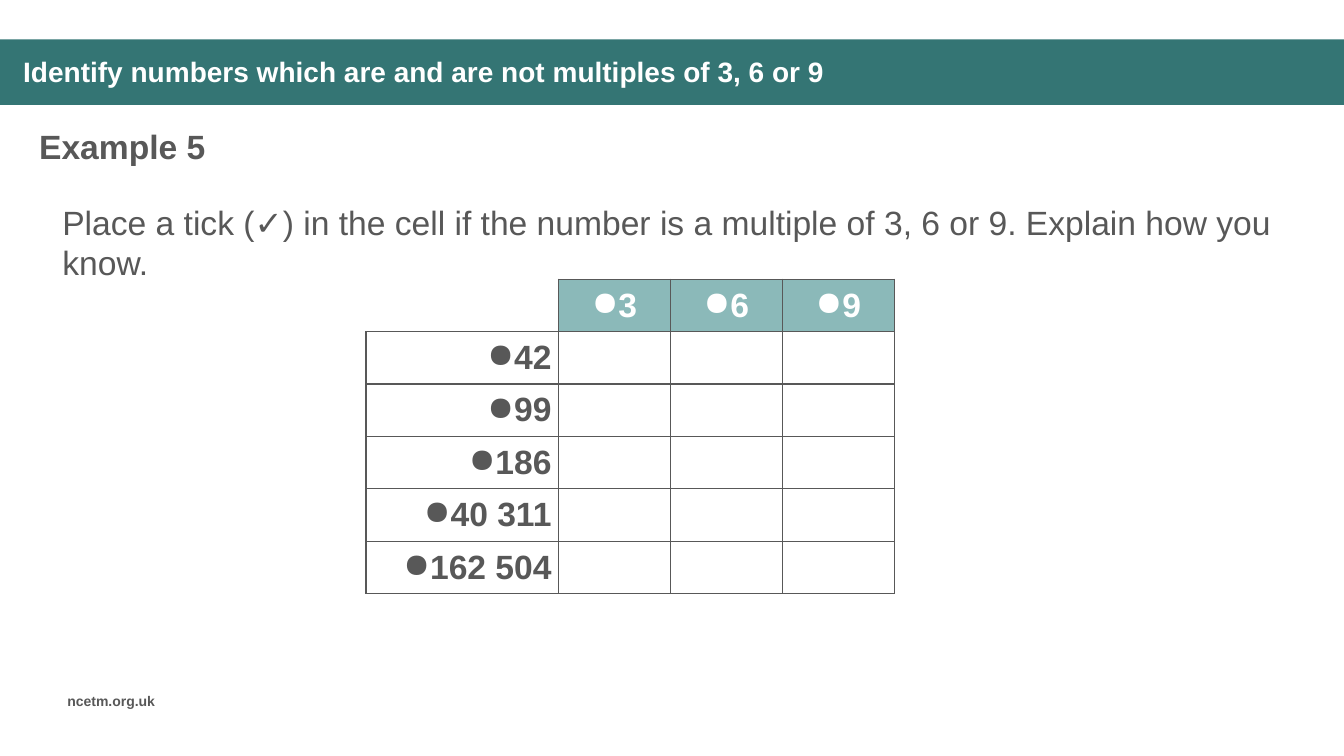
import pptx
import pptx.util
import pptx.dml.color
import pptx.enum.shapes
import pptx.enum.text
import pptx.oxml
import pptx.oxml.ns

Inches = pptx.util.Inches
Pt = pptx.util.Pt
ALIGN = pptx.enum.text.PP_ALIGN
MIDDLE = pptx.enum.text.MSO_ANCHOR.MIDDLE

COLOURS = {"banner": "347574", "header": "8BB9B9", "text": "585858", "white": "FFFFFF"}
FONT = "Arial"
DIVISORS = ["3", "6", "9"]
NUMBERS = ["42", "99", "186", "40 311", "162 504"]
LABEL_WIDTH, DIVISOR_WIDTH, ROW_HEIGHT = 1.91, 1.11, 0.52


def colour(name):
    """Return the named colour."""
    return pptx.dml.color.RGBColor.from_string(COLOURS[name])


def style(paragraph, size, name="text", bold=False):
    """Set the font of a paragraph."""
    font = paragraph.font
    font.name, font.size, font.bold = FONT, Pt(size), bold
    font.color.rgb = colour(name)


def add_banner(slide, left, top, width, height, heading):
    """Draw the full-width banner with the title in it."""
    banner = slide.shapes.add_shape(
        pptx.enum.shapes.MSO_SHAPE.RECTANGLE,
        Inches(left), Inches(top), Inches(width), Inches(height))
    banner.shadow.inherit = False
    banner.fill.solid()
    banner.fill.fore_color.rgb = colour("banner")
    banner.line.fill.background()

    title = slide.shapes.title
    banner.element.addnext(title.element)
    title.left, title.top = Inches(left + 0.13), Inches(top + 0.1)
    title.width, title.height = Inches(11.58), Inches(height - 0.18)
    title.text_frame.text = heading
    title.text_frame.vertical_anchor = MIDDLE
    title.text_frame.auto_size = pptx.enum.text.MSO_AUTO_SIZE.NONE
    paragraph = title.text_frame.paragraphs[0]
    paragraph.alignment = ALIGN.LEFT
    paragraph.line_spacing = 0.9
    style(paragraph, 20, "white", True)


def add_text(slide, left, top, width, height, words, size, bold=False):
    """Place one wrapped paragraph in a box."""
    frame = slide.shapes.add_textbox(
        Inches(left), Inches(top), Inches(width), Inches(height)).text_frame
    frame.word_wrap = True
    frame.text = words
    style(frame.paragraphs[0], size, "text", bold)


def add_borders(cell, sides):
    """Draw the given sides of a cell and clear the others."""
    properties = cell._tc.get_or_add_tcPr()
    for position, side in enumerate("LRTB"):
        fill = (f'<a:solidFill><a:srgbClr val="{COLOURS["text"]}"/></a:solidFill>'
                if side in sides else "<a:noFill/>")
        properties.insert(position, pptx.oxml.parse_xml(
            f'<a:ln{side} {pptx.oxml.ns.nsdecls("a")} w="{Pt(1)}">{fill}</a:ln{side}>'))


def fill_cell(cell, words, alignment, name="text"):
    """Write a bulleted entry in a cell."""
    paragraph = cell.text_frame.paragraphs[0]
    paragraph.add_run().text = words
    paragraph._p.get_or_add_pPr().append(pptx.oxml.parse_xml(
        f'<a:buChar {pptx.oxml.ns.nsdecls("a")} char="●"/>'))
    paragraph.alignment = alignment
    style(paragraph, 24, name, bool(words))
    if words:
        cell.vertical_anchor = MIDDLE
        cell.margin_left = cell.margin_right = Inches(0.07)
        cell.margin_top = cell.margin_bottom = 0


def add_tick_table(slide, left, top):
    """Build the grid of numbers against divisors."""
    rows, columns = len(NUMBERS) + 1, len(DIVISORS) + 1
    table = slide.shapes.add_table(
        rows, columns, Inches(left), Inches(top),
        Inches(LABEL_WIDTH + DIVISOR_WIDTH * len(DIVISORS)),
        Inches(ROW_HEIGHT * rows)).table
    table.first_row = table.horz_banding = False
    for index, column in enumerate(table.columns):
        column.width = Inches(DIVISOR_WIDTH if index else LABEL_WIDTH)
    for row_index, row in enumerate(table.rows):
        row.height = Inches(ROW_HEIGHT)
        for column_index, cell in enumerate(row.cells):
            cell.fill.background()
            if row_index == column_index == 0:
                add_borders(cell, "RB")
                continue
            add_borders(cell, "LRTB")
            if row_index == 0:
                cell.fill.solid()
                cell.fill.fore_color.rgb = colour("header")
                fill_cell(cell, DIVISORS[column_index - 1], ALIGN.CENTER, "white")
            elif column_index == 0:
                fill_cell(cell, NUMBERS[row_index - 1], ALIGN.RIGHT)
            else:
                fill_cell(cell, "", ALIGN.LEFT)


def main():
    """Build and save the slide."""
    deck = pptx.Presentation()
    deck.slide_width, deck.slide_height = Inches(13.33), Inches(7.5)
    slide = deck.slides.add_slide(deck.slide_layouts[5])
    add_banner(slide, 0, 0.39, 13.33, 0.65,
               "Identify numbers which are and are not multiples of 3, 6 or 9")
    add_text(slide, 0.57, 6.82, 1.21, 0.27, "ncetm.org.uk", 10, True)
    add_text(slide, 0.29, 1.2, 6.66, 0.5, "Example 5", 24, True)
    add_tick_table(slide, 3.63, 2.77)
    add_text(slide, 0.52, 1.95, 12.36, 0.91,
             "Place a tick (✓) in the cell if the number is a multiple of 3, 6 or 9. "
             "Explain how you know.", 24)
    deck.save("out.pptx")


if __name__ == "__main__":
    main()
